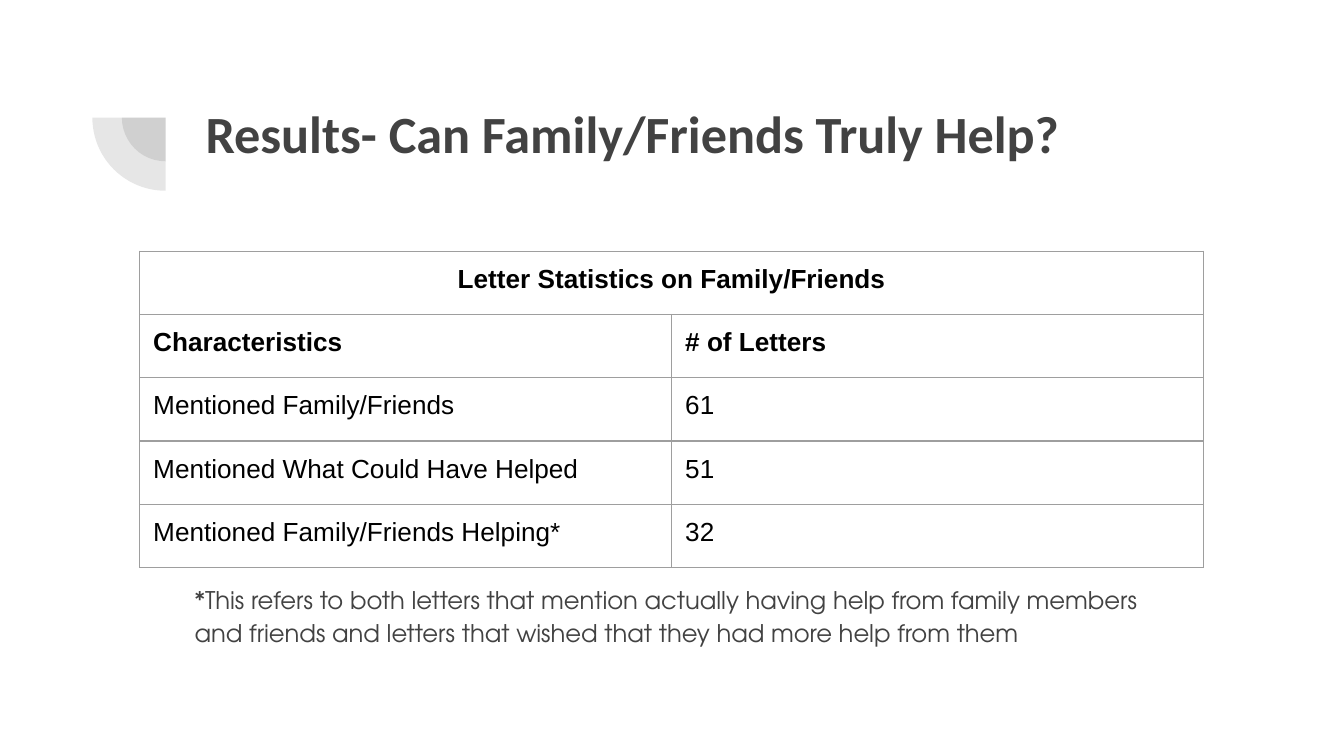
"""Build the slide on letters that mention family and friends."""
from lxml import etree
from pptx import Presentation
from pptx import util as u
from pptx.dml import color
from pptx.enum import shapes, text
from pptx.oxml import ns

INSET = 7.2


def rgb(code):
    return color.RGBColor.from_string(code)


def child(parent, tag, **attributes):
    return etree.SubElement(parent, ns.qn(tag), **attributes)


class SlideBuilder:
    ink = "424242"
    black = "000000"
    border = "9E9E9E"

    def __init__(self, deck):
        self.slide = deck.slides.add_slide(deck.slide_layouts[6])

    def quarter(self, center_x, center_y, radius):
        pie = self.slide.shapes.add_shape(
            shapes.MSO_SHAPE.PIE, u.Pt(center_x - radius), u.Pt(center_y - radius),
            u.Pt(2 * radius), u.Pt(2 * radius))
        pie.adjustments[0] = 108
        pie.adjustments[1] = 162
        pie.rotation = 270
        pie.shadow.inherit = False
        pie.line.fill.background()
        pie.fill.solid()
        pie.fill.fore_color.rgb = rgb(self.ink)
        fill_color = pie.fill._xPr.find(ns.qn("a:solidFill"))[0]
        child(fill_color, "a:alpha", val="13000")

    def add_run(self, para, words, size, font, code, bold=False):
        span = para.add_run()
        span.text = words
        span.font.size = u.Pt(size)
        span.font.name = font
        span.font.bold = bold
        span.font.color.rgb = rgb(code)

    def set_insets(self, holder):
        holder.margin_left = holder.margin_right = u.Pt(INSET)
        holder.margin_top = holder.margin_bottom = u.Pt(INSET)

    def text_box(self, left, top, width, height, words, size, font,
                 bold=False, line_spacing=1.0, space_after=0):
        box = self.slide.shapes.add_textbox(
            u.Pt(left), u.Pt(top), u.Pt(width), u.Pt(height))
        frame = box.text_frame
        frame.word_wrap = True
        self.set_insets(frame)
        para = frame.paragraphs[0]
        para.line_spacing = line_spacing
        para.space_after = u.Pt(space_after)
        self.add_run(para, words, size, font, self.ink, bold)

    def cell_borders(self, cell):
        properties = cell._tc.get_or_add_tcPr()
        for position, side in enumerate(("a:lnL", "a:lnR", "a:lnT", "a:lnB")):
            line = etree.Element(ns.qn(side), w=str(u.Pt(0.75)))
            child(child(line, "a:solidFill"), "a:srgbClr", val=self.border)
            properties.insert(position, line)

    def table(self, left, top, column_width, row_height, title, rows):
        grid = [(title, "")] + rows
        columns = len(rows[0])
        frame = self.slide.shapes.add_table(
            len(grid), columns, u.Pt(left), u.Pt(top),
            u.Pt(columns * column_width), u.Pt(len(grid) * row_height))
        table = frame.table
        table.first_row = table.horz_banding = False
        table.cell(0, 0).merge(table.cell(0, columns - 1))
        for row_index, values in enumerate(grid):
            for column_index, value in enumerate(values):
                cell = table.cell(row_index, column_index)
                self.set_insets(cell)
                cell.fill.background()
                self.cell_borders(cell)
                if value:
                    para = cell.text_frame.paragraphs[0]
                    if row_index == 0:
                        para.alignment = text.PP_ALIGN.CENTER
                    self.add_run(para, value, 14, "Arial", self.black, row_index < 2)


def main():
    deck = Presentation()
    deck.slide_width, deck.slide_height = u.Pt(720), u.Pt(405)
    builder = SlideBuilder(deck)
    for radius in (23.4, 39.2):
        builder.quarter(88.7, 63, radius)
    builder.text_box(103, 46.8, 553.7, 78.5, "Results- Can Family/Friends Truly Help?",
                     28, "Calibri", bold=True)
    builder.text_box(
        97.2, 303.8, 525, 100,
        "*This refers to both letters that mention actually having help from family "
        "members and friends and letters that wished that they had more help from them",
        13, "TeX Gyre Adventor", line_spacing=1.15, space_after=12)
    builder.table(74.9, 134.6, 285, 33.9, "Letter Statistics on Family/Friends", [
        ("Characteristics", "# of Letters"),
        ("Mentioned Family/Friends", "61"),
        ("Mentioned What Could Have Helped", "51"),
        ("Mentioned Family/Friends Helping*", "32"),
    ])
    deck.save("out.pptx")


if __name__ == "__main__":
    main()
